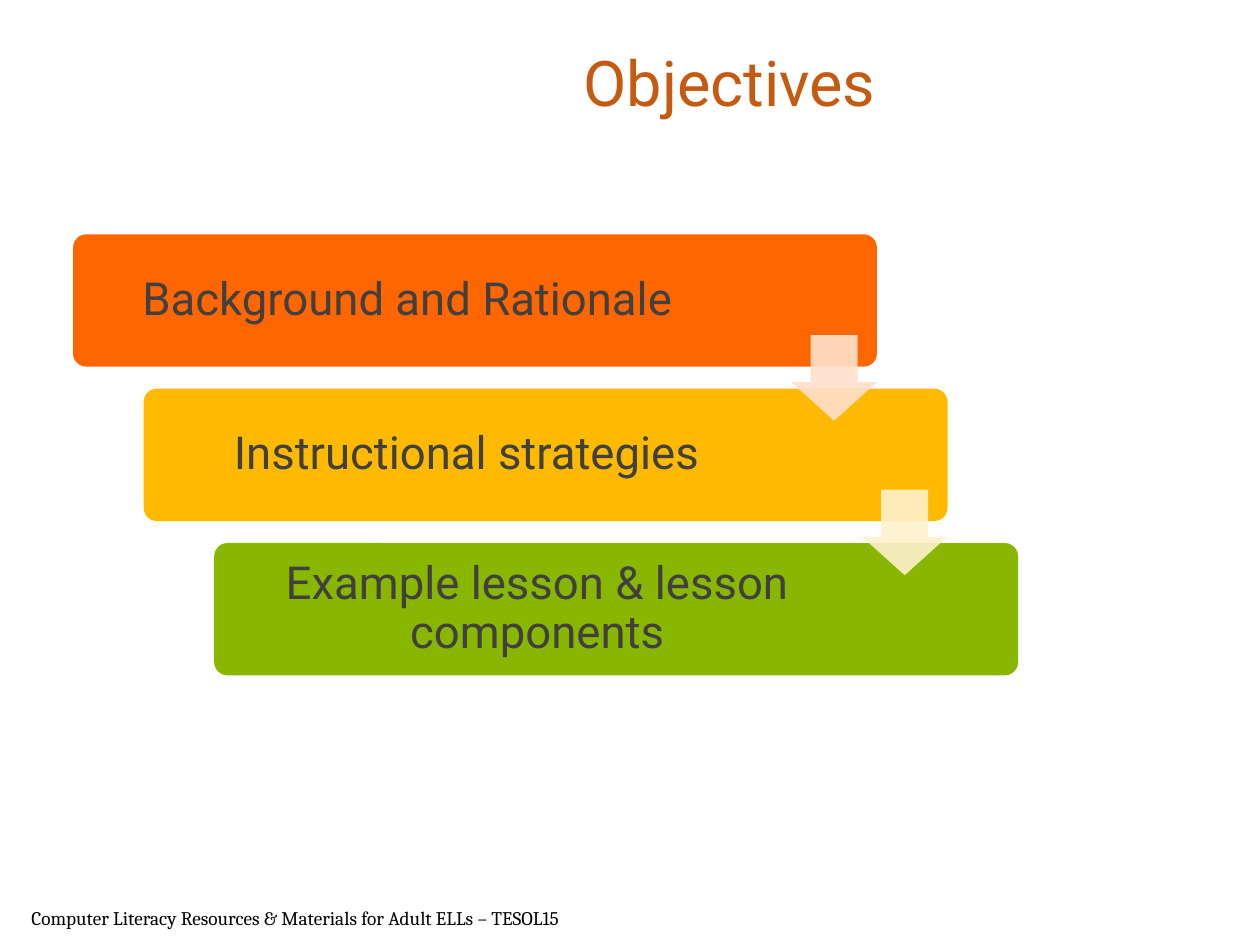
from lxml import etree
from pptx import Presentation
from pptx.dml.color import RGBColor
from pptx.enum import shapes, text
from pptx.oxml.ns import qn
from pptx.util import Inches, Pt

COLORS = {
    "title": "C55A11", "label": "404040", "footer": "000000",
    "orange": "FF6600", "amber": "FFBA00", "green": "89B700",
    "peach": "FFE0CB", "cream": "FFF1CB",
}


def write(tf, words, size, color, font="Roboto", align=text.PP_ALIGN.CENTER,
          anchor=text.MSO_ANCHOR.MIDDLE, inset=None, line=None, after=None):
    """Put one formatted paragraph into a text frame."""
    tf.word_wrap = True
    tf.auto_size = text.MSO_AUTO_SIZE.NONE
    tf.vertical_anchor = anchor
    if inset is not None:
        tf.margin_left = tf.margin_right = Inches(inset)
        tf.margin_top = tf.margin_bottom = Inches(inset)
    p = tf.paragraphs[0]
    p.alignment = align
    if line is not None:
        p.line_spacing = line
    if after is not None:
        p.space_after = Pt(after)
    r = p.add_run()
    r.text = words
    r.font.name = font
    r.font.size = Pt(size)
    r.font.color.rgb = RGBColor.from_string(COLORS[color])


class Deck:
    """Holds the style and the current slide."""

    def __init__(self, width, height):
        self.prs = Presentation()
        self.prs.slide_width = Inches(width)
        self.prs.slide_height = Inches(height)
        self.s = None

    def new_slide(self):
        self.s = self.prs.slides.add_slide(self.prs.slide_layouts[5])

    def title(self, words, x, y, w, h):
        sp = self.s.shapes.title
        sp.left, sp.top, sp.width, sp.height = map(Inches, (x, y, w, h))
        write(sp.text_frame, words, 36, "title")

    def shape(self, kind, x, y, w, h, color, adjust, alpha=None):
        sp = self.s.shapes.add_shape(kind, *map(Inches, (x, y, w, h)))
        for i, value in enumerate(adjust):
            sp.adjustments[i] = value
        sp.shadow.inherit = False
        sp.fill.solid()
        sp.fill.fore_color.rgb = RGBColor.from_string(COLORS[color])
        sp.line.fill.background()
        if alpha is not None:
            rgb = sp.fill._xPr.find(".//" + qn("a:srgbClr"))
            etree.SubElement(rgb, qn("a:alpha")).set("val", str(alpha * 1000))

    def box(self, words, x, y, w, h, size, color, **style):
        sp = self.s.shapes.add_textbox(*map(Inches, (x, y, w, h)))
        write(sp.text_frame, words, size, color, **style)

    def step(self, words, x, y, color, label_w):
        self.shape(shapes.MSO_SHAPE.ROUNDED_RECTANGLE, x, y, 6.38, 1.05, color, [0.1])
        self.box(words, x + 0.03, y + 0.03, label_w, 0.99, 26, "label",
                 inset=0.11, line=0.9, after=9.1)

    def arrow(self, x, y, color):
        self.shape(shapes.MSO_SHAPE.DOWN_ARROW, x, y, 0.68, 0.68, color,
                   [0.55, 0.45], alpha=90)


def main():
    deck = Deck(10, 7.5)
    deck.new_slide()
    deck.title("Objectives", 2.08, 0.02, 7.42, 1.25)

    # Staircase of steps
    left, top, dx, dy = 0.58, 1.86, 0.56, 1.225
    steps = [
        ("Background and Rationale", "orange", 5.25),
        ("Instructional strategies", "amber", 5.07),
        ("Example lesson & lesson components", "green", 5.07),
    ]
    for i, (words, color, label_w) in enumerate(steps):
        deck.step(words, left + i * dx, top + i * dy, color, label_w)

    # Arrows from each step to the next
    for i, color in enumerate(("peach", "cream")):
        deck.arrow(left + 5.7 + i * dx, top + 0.8 + i * dy, color)

    # Footer
    deck.box("Computer Literacy Resources & Materials for Adult ELLs – TESOL15",
             0.15, 7.14, 4.7, 0.35, 11, "footer", font="Cambria",
             align=text.PP_ALIGN.LEFT, anchor=text.MSO_ANCHOR.TOP)

    deck.prs.save("out.pptx")


if __name__ == "__main__":
    main()
